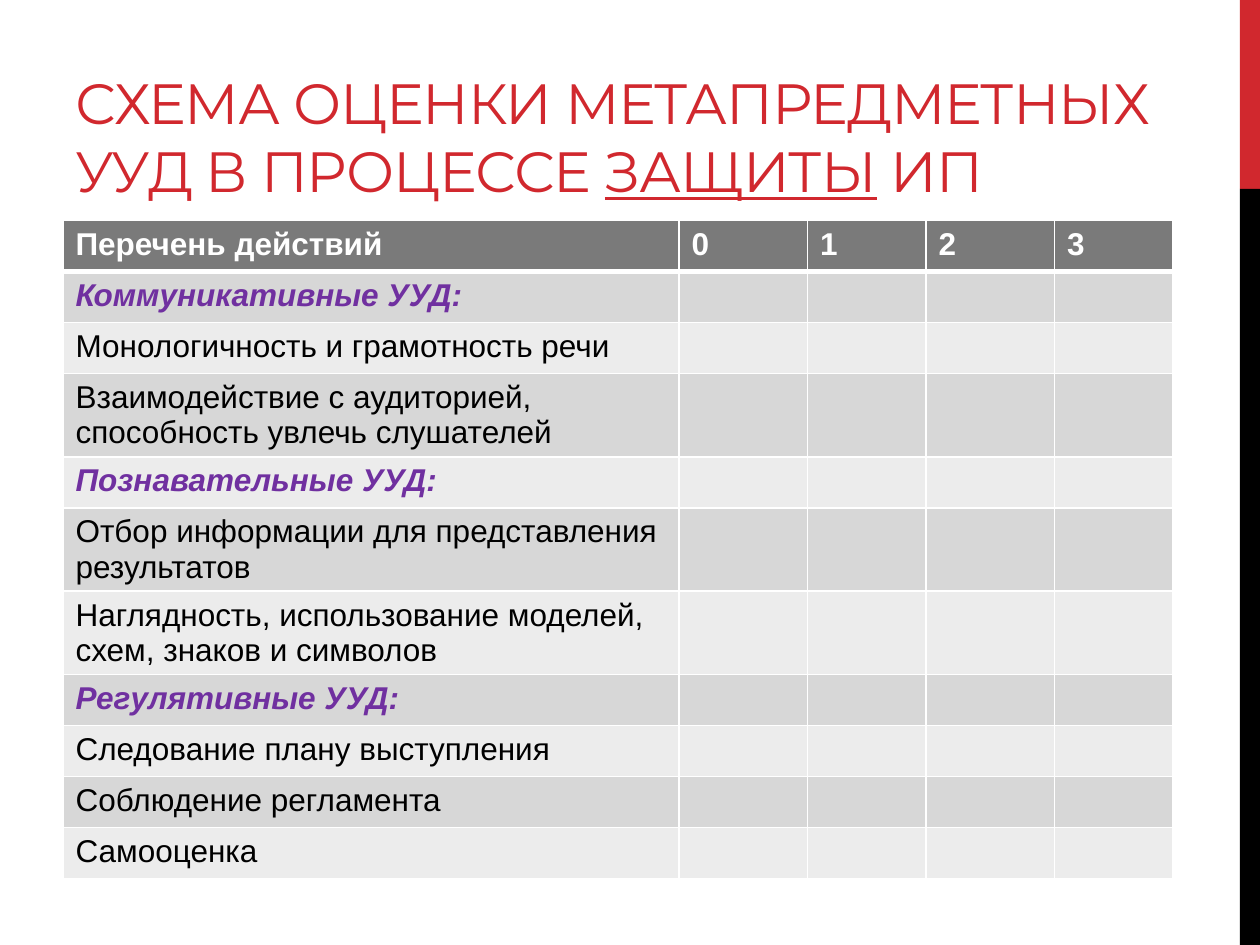
"""Build a slide with a table for assessing skills at a project defence."""
from lxml import etree
from pptx import Presentation
from pptx import util as u
from pptx.dml.color import RGBColor
from pptx.enum import shapes, text
from pptx.oxml import ns

RED = RGBColor(0xD1, 0x28, 0x2E)
BLACK = RGBColor(0, 0, 0)
WHITE = RGBColor(0xFF, 0xFF, 0xFF)
GRAY = RGBColor(0x7A, 0x7A, 0x7A)
BANDS = RGBColor(0xD7, 0xD7, 0xD7), RGBColor(0xEC, 0xEC, 0xEC)
PURPLE = RGBColor(0x70, 0x30, 0xA0)

TITLE = [
    ("СХЕМА ОЦЕНКИ МЕТАПРЕДМЕТНЫХ УУД В ПРОЦЕССЕ ", False),
    ("ЗАЩИТЫ", True),
    (" ИП", False),
]
HEAD = ["Перечень действий", "0", "1", "2", "3"]
GROUPS = [
    ("Коммуникативные УУД:", [
        "Монологичность и грамотность речи",
        "Взаимодействие с аудиторией, способность увлечь слушателей",
    ]),
    ("Познавательные УУД:", [
        "Отбор информации для представления результатов",
        "Наглядность, использование моделей, схем, знаков и символов",
    ]),
    ("Регулятивные УУД:", [
        "Следование плану выступления",
        "Соблюдение регламента",
        "Самооценка",
    ]),
]
WIDTHS = [4.89, 1.02, 0.94, 1.02, 0.94]
BARS = [(0, 1.5, RED), (1.5, 6, BLACK)]
LEFT, WIDTH, TOP, HEIGHT = 0.5, 8.83, 1.75, 4.46


def add_bar(slide, top, height, color):
    bar = slide.shapes.add_shape(
        shapes.MSO_SHAPE.RECTANGLE,
        u.Inches(9.84), u.Inches(top), u.Inches(0.16), u.Inches(height))
    bar.shadow.inherit = False
    bar.fill.solid()
    bar.fill.fore_color.rgb = color
    bar.line.fill.background()


def add_title(slide):
    title = slide.shapes.title
    title.left, title.top = u.Inches(LEFT), u.Inches(0.17)
    title.width, title.height = u.Inches(WIDTH), u.Inches(1.5)
    frame = title.text_frame
    frame.word_wrap = True
    frame.auto_size = text.MSO_AUTO_SIZE.NONE
    frame.vertical_anchor = text.MSO_ANCHOR.BOTTOM
    para = frame.paragraphs[0]
    para.alignment = text.PP_ALIGN.LEFT
    for words, under in TITLE:
        run = para.add_run()
        run.text = words
        font = run.font
        font.name, font.size, font.underline = "Montserrat", u.Pt(32.4), under
        font.color.rgb = RED
        font._element.set("spc", "-60")


def set_edges(cell, row):
    props = cell._tc.get_or_add_tcPr()
    thick = {"T": 3 if row == 1 else 1, "B": 3 if row == 0 else 1}
    for side in "LRTB":
        width = u.Pt(thick.get(side, 1))
        line = etree.SubElement(props, ns.qn("a:ln" + side), w=str(width))
        fill = etree.SubElement(line, ns.qn("a:solidFill"))
        etree.SubElement(fill, ns.qn("a:srgbClr"), val=str(WHITE))


def fill_cell(cell, row, words, color, bold, slant):
    set_edges(cell, row)
    cell.fill.solid()
    cell.fill.fore_color.rgb = BANDS[(row - 1) % 2] if row else GRAY
    para = cell.text_frame.paragraphs[0]
    para.font.size = u.Pt(18)
    if words:
        run = para.add_run()
        run.text = words
        font = run.font
        font.name, font.size = "Arial", u.Pt(18)
        font.bold, font.italic = bold, slant
        font.color.rgb = color


def add_grid(slide):
    rows = [(HEAD, WHITE, True, False)]
    blank = [""] * (len(HEAD) - 1)
    for group, items in GROUPS:
        rows.append(([group] + blank, PURPLE, True, True))
        rows += [([item] + blank, BLACK, False, False) for item in items]
    grid = slide.shapes.add_table(
        len(rows), len(HEAD), u.Inches(LEFT), u.Inches(TOP),
        u.Inches(WIDTH), u.Inches(HEIGHT)).table
    for col, width in zip(grid.columns, WIDTHS):
        col.width = u.Inches(width)
    for row, (cells, color, bold, slant) in enumerate(rows):
        for col, words in enumerate(cells):
            fill_cell(grid.cell(row, col), row, words, color, bold, slant)


def main():
    deck = Presentation()
    deck.slide_width, deck.slide_height = u.Inches(10), u.Inches(7.5)
    slide = deck.slides.add_slide(deck.slide_layouts[5])
    for bar in BARS:
        add_bar(slide, *bar)
    add_title(slide)
    add_grid(slide)
    deck.save("out.pptx")


if __name__ == "__main__":
    main()
